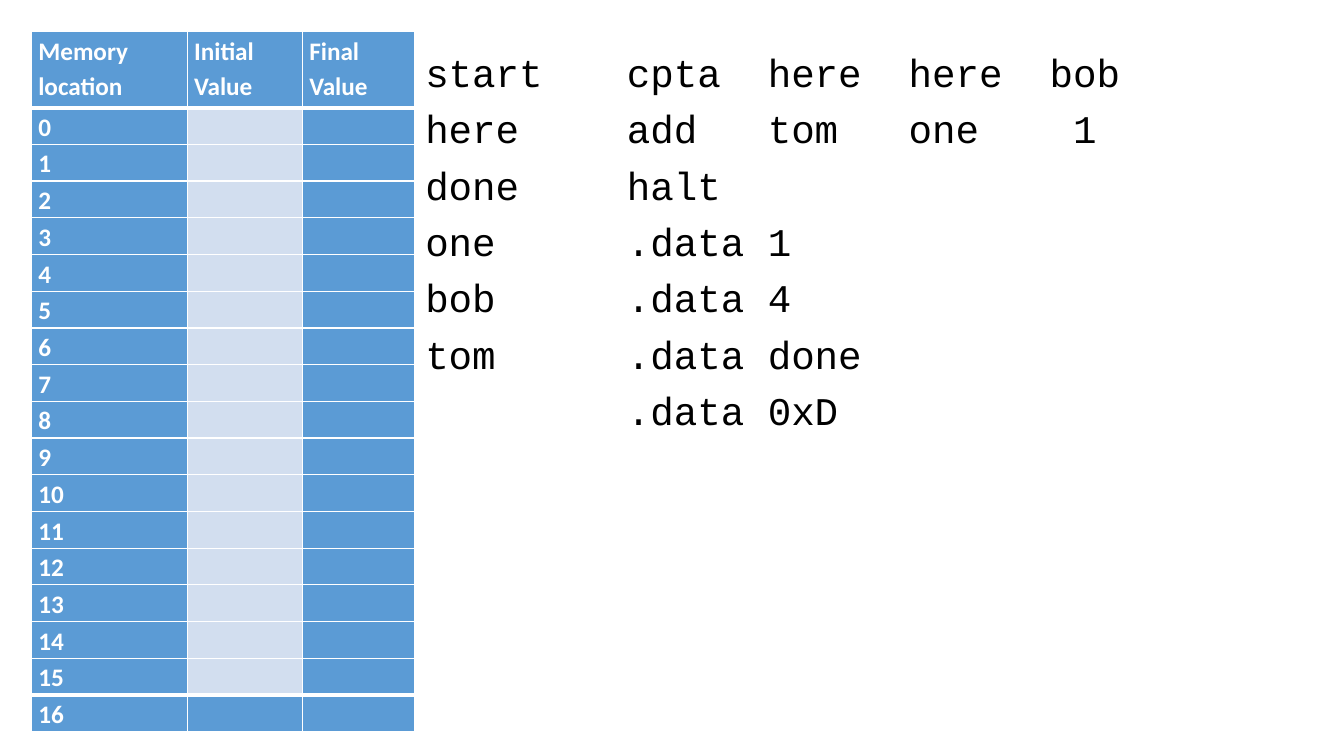
"""Build the slide with a memory trace table beside its assembly program."""
from lxml.etree import SubElement
from pptx import Presentation
from pptx.dml.color import RGBColor
from pptx.oxml.ns import qn
from pptx.util import Pt

WHITE = RGBColor(0xFF, 0xFF, 0xFF)
BLACK = RGBColor(0x00, 0x00, 0x00)
BLUE = RGBColor(0x5B, 0x9B, 0xD5)
PALE = RGBColor(0xD2, 0xDE, 0xEF)

HEADINGS = ["Memory\vlocation", "Initial\nValue", "Final\nValue"]
LOCATIONS = 17
COLUMN_WIDTHS = [111.3, 82.3, 80]
HEADING_HEIGHT, LOCATION_HEIGHT = 54.4, 26.24
CELL_MARGINS = {"margin_left": 4.9, "margin_right": 4.9, "margin_top": 0, "margin_bottom": 0}
CELL_FONT = {"name": "Calibri", "size": Pt(18), "bold": True}
CODE_FONT = {"name": "Courier New", "size": Pt(28)}
LABEL_WIDTH = Pt(144)
PROGRAM = [
    "start\tcpta  here  here  bob",
    "here\tadd   tom   one    1",
    "done\thalt",
    "one\t.data 1",
    "bob\t.data 4",
    "tom\t.data done",
    "\t.data 0xD",
]


def format_font(font, values, color):
    for attribute, value in values.items():
        setattr(font, attribute, value)
    font.color.rgb = color


def add_border(cell, side, width):
    border = SubElement(cell._tc.get_or_add_tcPr(), qn(f"a:{side}"), w=str(Pt(width)))
    fill = SubElement(border, qn("a:solidFill"))
    SubElement(fill, qn("a:srgbClr"), val=str(WHITE))


deck = Presentation()
deck.slide_width, deck.slide_height = Pt(960), Pt(540)
slide = deck.slides.add_slide(deck.slide_layouts[1])
heading = slide.shapes.title
heading._element.getparent().remove(heading._element)

memory = slide.shapes.add_table(
    LOCATIONS + 1, len(HEADINGS), Pt(22.5), Pt(22.5), Pt(sum(COLUMN_WIDTHS)),
    Pt(HEADING_HEIGHT + LOCATIONS * LOCATION_HEIGHT)).table
for column, width in zip(memory.columns, COLUMN_WIDTHS):
    column.width = Pt(width)

contents = [HEADINGS] + [[str(location), "", ""] for location in range(LOCATIONS)]
for row, texts in enumerate(contents):
    memory.rows[row].height = Pt(LOCATION_HEIGHT if row else HEADING_HEIGHT)
    for col, text in enumerate(texts):
        cell = memory.cell(row, col)
        for attribute, margin in CELL_MARGINS.items():
            setattr(cell, attribute, Pt(margin))
        widths = {"lnL": 1, "lnR": 1, "lnT": 3 if row in (1, LOCATIONS) else 1,
                  "lnB": 3 if row in (0, LOCATIONS - 1) else 1}
        for side, width in widths.items():
            add_border(cell, side, width)
        cell.fill.solid()
        cell.fill.fore_color.rgb = PALE if col == 1 and 0 < row < LOCATIONS else BLUE
        cell.text = text
        for paragraph in cell.text_frame.paragraphs:
            paragraph.line_spacing = 1.15
            for run in paragraph.runs:
                format_font(run.font, CELL_FONT, WHITE)

program = slide.placeholders[1]
program.left, program.top, program.width, program.height = Pt(296.6), Pt(34.7), Pt(597.6), Pt(451.4)
program.text_frame.text = "\n".join(PROGRAM)
for number, line in enumerate(program.text_frame.paragraphs):
    line.line_spacing = 0.9
    line.space_before = Pt(10 if number else 0)
    properties = line._p.get_or_add_pPr()
    for attribute, value in {"marL": 0, "indent": 0, "defTabSz": LABEL_WIDTH}.items():
        properties.set(attribute, str(int(value)))
    SubElement(properties, qn("a:buNone"))
    for run in line.runs:
        format_font(run.font, CODE_FONT, BLACK)

deck.save("out.pptx")
